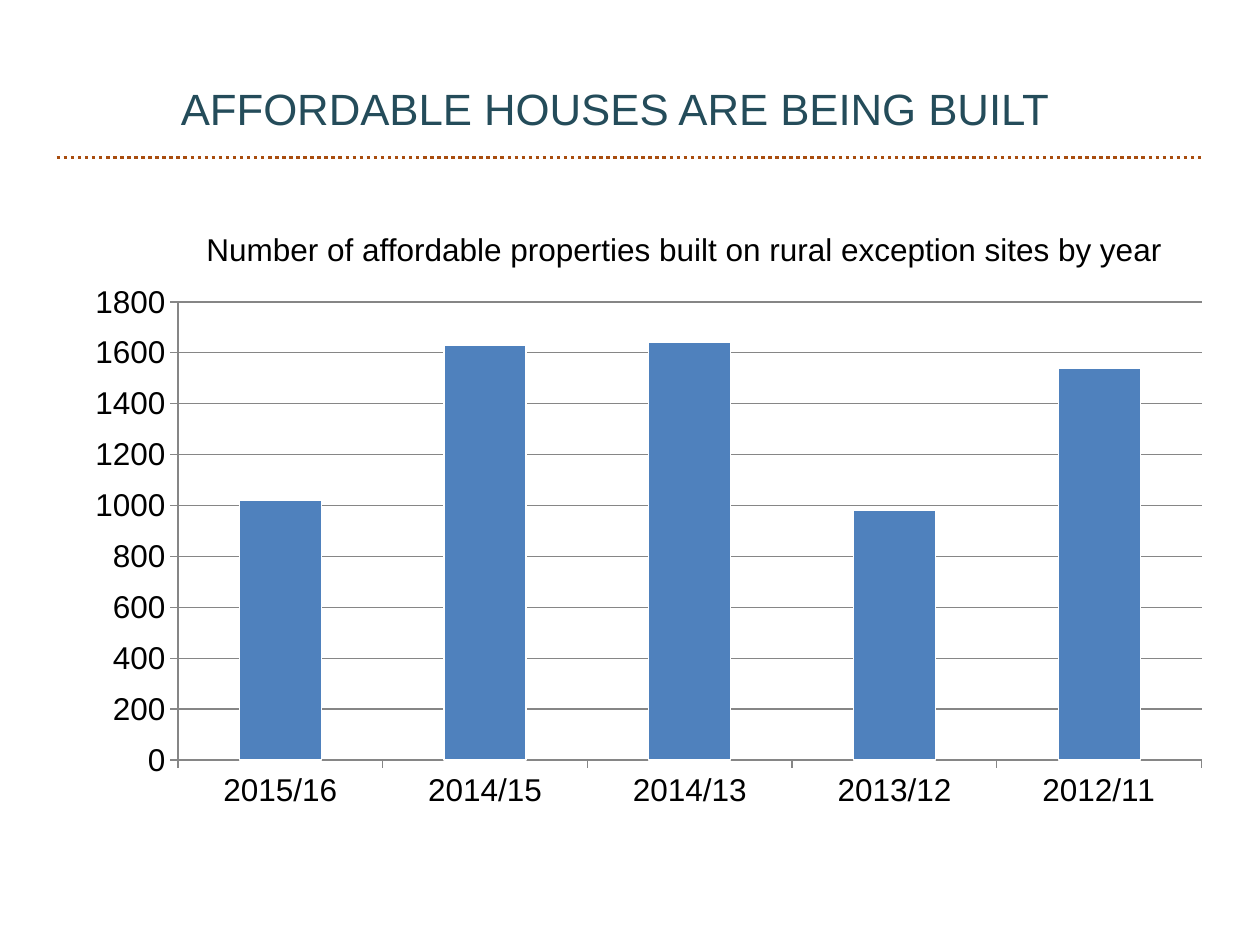
from dataclasses import dataclass

from lxml.etree import SubElement
from pptx import Presentation
from pptx.chart.data import CategoryChartData
from pptx.dml.color import RGBColor as RGB
from pptx.enum.chart import XL_CHART_TYPE as ChartType, XL_TICK_MARK as Tick
from pptx.enum.dml import MSO_LINE_DASH_STYLE as Dash
from pptx.enum.shapes import MSO_CONNECTOR as Connector
from pptx.enum.text import MSO_AUTO_SIZE as AutoSize, PP_ALIGN as Align
from pptx.oxml import parse_xml
from pptx.oxml.ns import nsdecls, qn
from pptx.util import Inches, Pt


@dataclass(frozen=True)
class Theme:
    font: str = "Arial"
    heading: RGB = RGB(0x24, 0x4C, 0x5A)
    rule: RGB = RGB(0xA8, 0x4D, 0x0F)
    text: RGB = RGB(0, 0, 0)
    bar: RGB = RGB(0x4F, 0x81, 0xBD)
    bar_edge: RGB = RGB(0xFF, 0xFF, 0xFF)
    grid: RGB = RGB(0x86, 0x86, 0x86)
    heading_size: Pt = Pt(25)
    body_size: Pt = Pt(18)


THEME = Theme()

HOMES_BUILT = {
    "2015/16": 1020,
    "2014/15": 1630,
    "2014/13": 1640,
    "2013/12": 980,
    "2012/11": 1540,
}


def add_label(slide, wording, box, size, color, align=Align.LEFT):
    label = slide.shapes.add_textbox(*map(Inches, box))
    frame = label.text_frame
    frame.word_wrap = True
    frame.auto_size = AutoSize.SHAPE_TO_FIT_TEXT
    paragraph = frame.paragraphs[0]
    paragraph.alignment = align
    run = paragraph.add_run()
    run.text = wording
    run.font.name = THEME.font
    run.font.size = size
    run.font.color.rgb = color


def add_dotted_rule(slide, left, right, y):
    rule = slide.shapes.add_connector(
        Connector.STRAIGHT, Inches(left), Inches(y), Inches(right), Inches(y))
    rule.line.color.rgb = THEME.rule
    rule.line.width = Pt(2)
    rule.line.dash_style = Dash.ROUND_DOT  # written as sysDot
    SubElement(rule._element.spPr, qn("a:effectLst"))


def style_line(line, color):
    line.color.rgb = color
    line.width = Pt(0.75)


def place_plot(chart, x, y, w, h):
    """Fix the inner plot area, in fractions of the chart frame."""
    plot_area = chart._chartSpace.chart.plotArea
    for layout in plot_area.findall(qn("c:layout")):
        plot_area.remove(layout)
    plot_area.insert(0, parse_xml(
        f'<c:layout {nsdecls("c")}><c:manualLayout>'
        '<c:layoutTarget val="inner"/><c:xMode val="edge"/><c:yMode val="edge"/>'
        f'<c:x val="{x}"/><c:y val="{y}"/><c:w val="{w}"/><c:h val="{h}"/>'
        '</c:manualLayout></c:layout>'))


def add_homes_chart(slide, box):
    homes = CategoryChartData()
    homes.categories = list(HOMES_BUILT)
    homes.add_series("Series 1", list(HOMES_BUILT.values()))
    chart = slide.shapes.add_chart(
        ChartType.COLUMN_CLUSTERED, *map(Inches, box), homes).chart
    chart.has_title = False
    chart.has_legend = False
    chart.font.name = THEME.font
    chart.font.size = THEME.body_size
    chart.font.color.rgb = THEME.text
    place_plot(chart, 0.09, 0.05, 0.89, 0.84)

    # Columns
    columns = chart.plots[0]
    columns.gap_width = 150
    columns.vary_by_categories = False
    series_format = columns.series[0].format
    series_format.fill.solid()
    series_format.fill.fore_color.rgb = THEME.bar
    style_line(series_format.line, THEME.bar_edge)

    # Axes
    for axis in (chart.category_axis, chart.value_axis):
        axis.major_tick_mark = Tick.OUTSIDE
        axis.minor_tick_mark = Tick.NONE
        style_line(axis.format.line, THEME.grid)
    amounts = chart.value_axis
    amounts.minimum_scale = 0
    amounts.maximum_scale = 1800
    amounts.major_unit = 200
    amounts.tick_labels.number_format = "0"
    amounts.tick_labels.number_format_is_linked = False
    amounts.has_major_gridlines = True
    style_line(amounts.major_gridlines.format.line, THEME.grid)


def main():
    deck = Presentation()
    deck.slide_width, deck.slide_height = Inches(10), Inches(7.5)
    slide = deck.slides.add_slide(deck.slide_layouts[6])

    add_dotted_rule(slide, 0.45, 9.55, 1.25)
    add_homes_chart(slide, (0.59, 2.18, 9.13, 4.33))

    # Heading and chart caption
    add_label(slide, "AFFORDABLE HOUSES ARE BEING BUILT", (0.98, 0.6, 7.8, 0.52),
              THEME.heading_size, THEME.heading, Align.CENTER)
    add_label(slide, "Number of affordable properties built on rural exception sites by year",
              (1.54, 1.78, 7.95, 0.4), THEME.body_size, THEME.text)

    deck.save("out.pptx")


if __name__ == "__main__":
    main()
